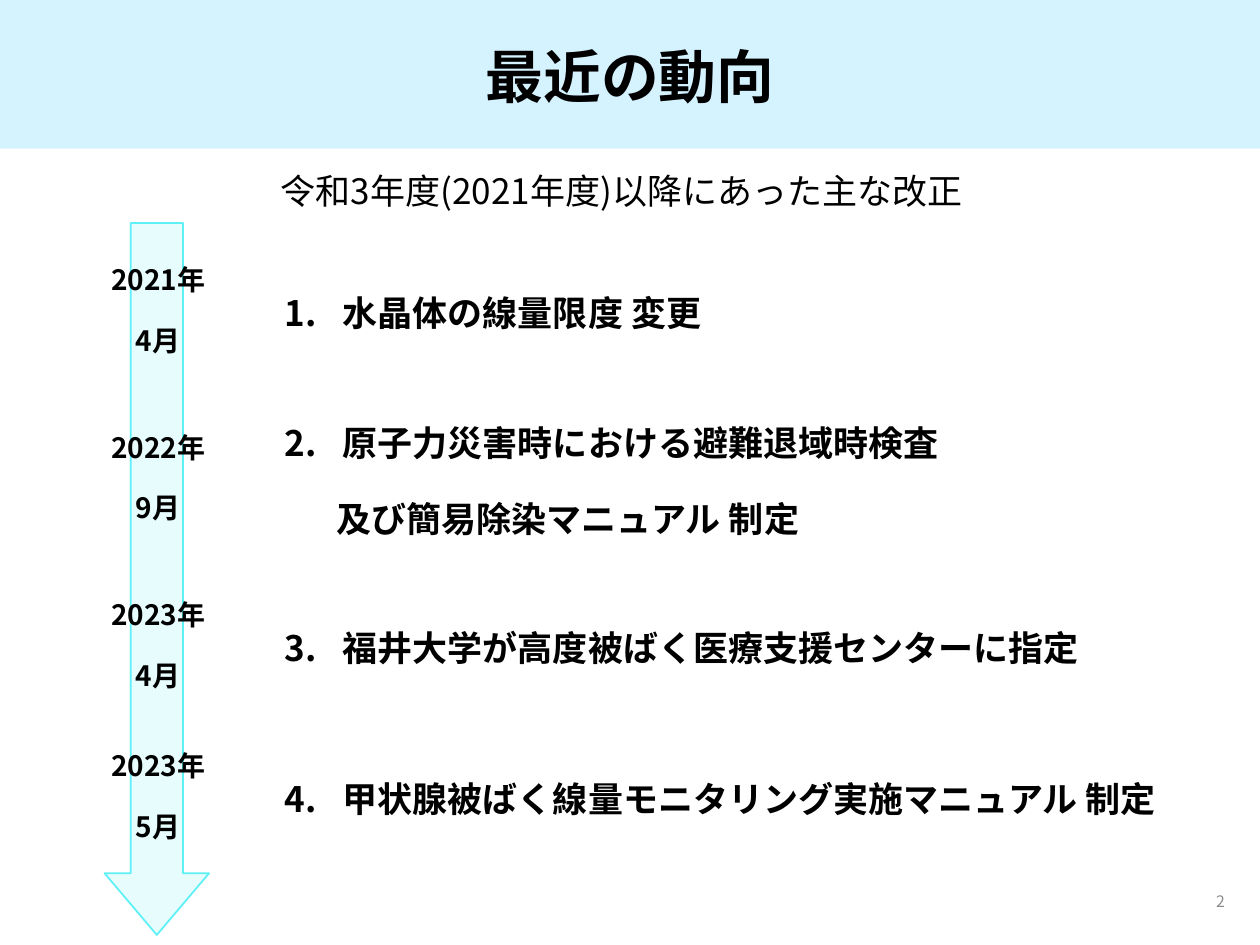
from dataclasses import dataclass

from lxml import etree
from pptx import Presentation
from pptx.dml.color import RGBColor
from pptx.enum import shapes, text
from pptx.oxml.ns import qn
from pptx.util import Inches, Pt

FONT = "Noto Sans CJK JP"
BLACK = RGBColor(0x00, 0x00, 0x00)
GRAY = RGBColor(0x8C, 0x8C, 0x8C)
BAND = RGBColor(0xC4, 0xEF, 0xFF)
ARROW_FILL = RGBColor(0xC9, 0xFA, 0xFC)
ARROW_LINE = RGBColor(0x5E, 0xF0, 0xF7)
NO_GRID_STYLE = "{2D5ABB26-0587-4C30-8999-92F81FD0307C}"
LEFT, CENTER, RIGHT = text.PP_ALIGN.LEFT, text.PP_ALIGN.CENTER, text.PP_ALIGN.RIGHT
COL_WIDTHS = (1.81, 7.36)


@dataclass(frozen=True)
class Revision:
    year: str
    month: str
    title: str
    continuation: str = ""
    height: float = 1.2


REVISIONS = (
    Revision("2021年", "4月", "水晶体の線量限度 変更"),
    Revision("2022年", "9月", "原子力災害時における避難退域時検査",
             "及び簡易除染マニュアル 制定", 1.46),
    Revision("2023年", "4月", "福井大学が高度被ばく医療支援センターに指定"),
    Revision("2023年", "5月", "甲状腺被ばく線量モニタリング実施マニュアル 制定"),
)


def write(p, content: str, *, size: float, color=BLACK, bold=False,
          align=LEFT, spacing=1.0, margin=0.0, indent=0.0) -> None:
    p.alignment = align
    p.line_spacing = spacing
    if margin:
        pPr = p._p.get_or_add_pPr()
        pPr.set("marL", str(Inches(margin)))
        pPr.set("indent", str(Inches(indent)))
    r = p.add_run()
    r.text = content
    r.font.size = Pt(size)
    r.font.bold = bold
    r.font.name = FONT
    r.font.color.rgb = color
    ea = etree.SubElement(r._r.get_or_add_rPr(), qn("a:ea"))
    ea.set("typeface", FONT)


def add_label(slide, content: str, x: float, y: float, w: float, h: float,
              *, anchor=text.MSO_ANCHOR.MIDDLE, **style) -> None:
    tf = slide.shapes.add_textbox(Inches(x), Inches(y), Inches(w), Inches(h)).text_frame
    tf.word_wrap = True
    tf.vertical_anchor = anchor
    write(tf.paragraphs[0], content, **style)


def add_block(slide, kind, x: float, y: float, w: float, h: float,
              fill: RGBColor, opacity: int):
    sp = slide.shapes.add_shape(kind, Inches(x), Inches(y), Inches(w), Inches(h))
    sp.shadow.inherit = False
    sp.fill.solid()
    sp.fill.fore_color.rgb = fill
    clr = sp.fill._xPr.find(qn("a:solidFill"))[0]
    etree.SubElement(clr, qn("a:alpha")).set("val", str(opacity * 1000))
    sp.line.fill.background()
    return sp


def add_timeline(slide, x: float, y: float) -> None:
    frame = slide.shapes.add_table(
        len(REVISIONS), len(COL_WIDTHS), Inches(x), Inches(y),
        Inches(sum(COL_WIDTHS)), Inches(sum(rev.height for rev in REVISIONS)))
    table = frame.table
    table.first_row = table.horz_banding = False
    table._tbl.tblPr.find(qn("a:tableStyleId")).text = NO_GRID_STYLE
    for column, width in zip(table.columns, COL_WIDTHS):
        column.width = Inches(width)

    for i, rev in enumerate(REVISIONS):
        table.rows[i].height = Inches(rev.height)
        date, item = table.cell(i, 0), table.cell(i, 1)
        for cell in (date, item):
            cell.fill.background()
            cell.vertical_anchor = text.MSO_ANCHOR.MIDDLE
        tf = date.text_frame
        date_style = dict(size=16, bold=True, align=CENTER, spacing=1.5)
        write(tf.paragraphs[0], rev.year, **date_style)
        write(tf.add_paragraph(), rev.month, **date_style)
        tf = item.text_frame
        item_style = dict(size=20, bold=True, spacing=1.5)
        write(tf.paragraphs[0], f"{i + 1}.\t{rev.title}",
              margin=0.46, indent=-0.46, **item_style)
        if rev.continuation:
            write(tf.add_paragraph(), rev.continuation, margin=0.41, **item_style)


def main() -> None:
    prs = Presentation()
    prs.slide_width, prs.slide_height = Inches(10), Inches(7.5)
    s = prs.slides.add_slide(prs.slide_layouts[6])

    add_block(s, shapes.MSO_SHAPE.RECTANGLE, 0, 0, 10, 1.18, BAND, 70)
    add_label(s, "最近の動向", 0.69, 0.21, 8.62, 0.85,
              size=33, bold=True, align=CENTER, spacing=0.9)

    arrow = add_block(s, shapes.MSO_SHAPE.DOWN_ARROW, 0.83, 1.77, 0.83, 5.65,
                      ARROW_FILL, 46)
    arrow.adjustments[0], arrow.adjustments[1] = 0.5, 0.59
    arrow.line.color.rgb = ARROW_LINE
    arrow.line.width = Pt(1)

    add_label(s, "令和3年度(2021年度)以降にあった主な改正", 2.09, 1.3, 5.69, 0.44,
              anchor=text.MSO_ANCHOR.TOP, size=20, align=CENTER)
    add_timeline(s, 0.35, 1.77)
    add_label(s, "2", 7.57, 6.95, 2.25, 0.4, size=9, color=GRAY, align=RIGHT)

    prs.save("out.pptx")


if __name__ == "__main__":
    main()
